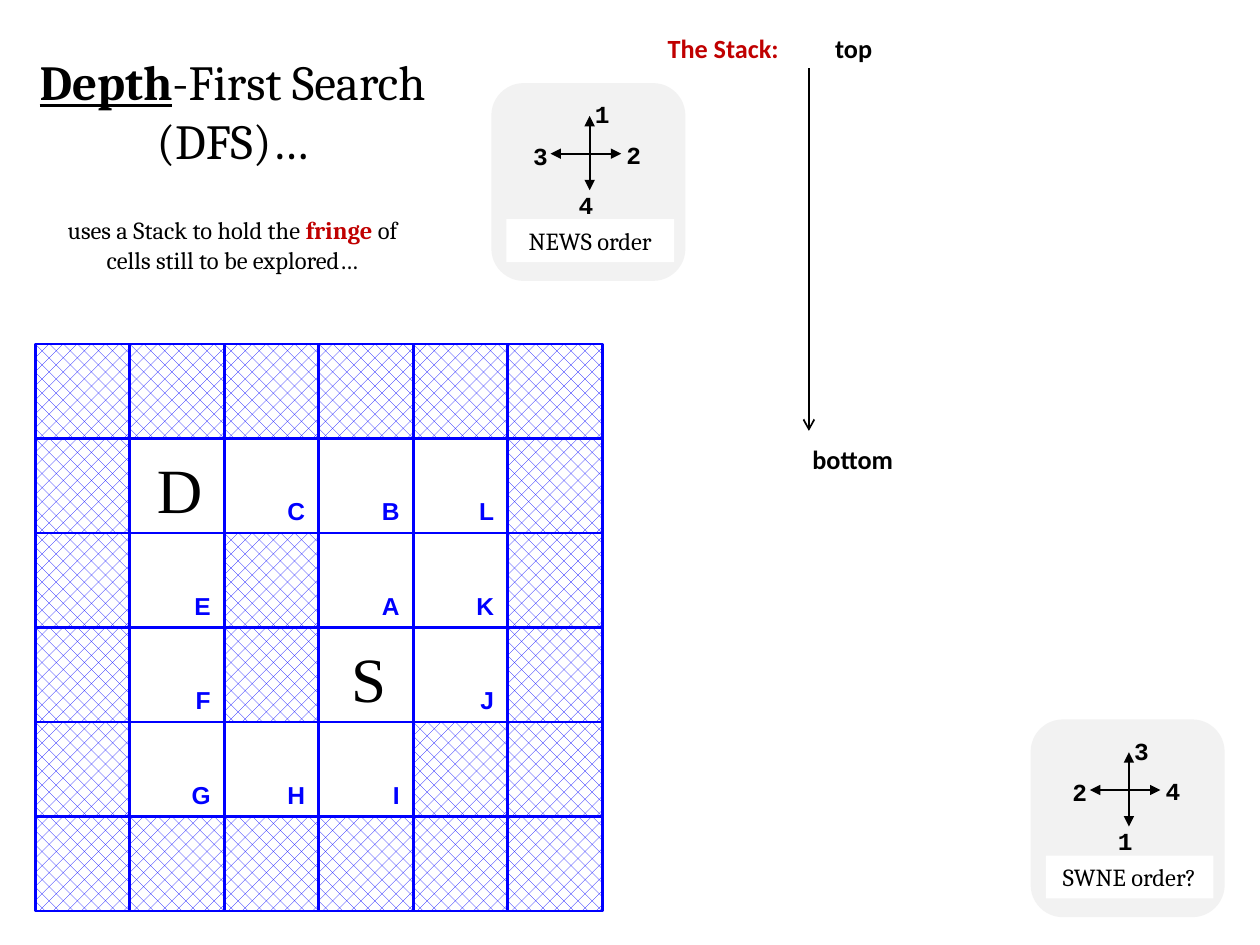
from dataclasses import dataclass

import pptx
import pptx.dml.color
import pptx.enum.dml
import pptx.enum.shapes
import pptx.enum.text
import pptx.oxml.ns
import pptx.util
from lxml import etree
from pptx.util import Inches

ALIGN = pptx.enum.text.PP_ALIGN
SHAPE = pptx.enum.shapes.MSO_SHAPE


@dataclass(frozen=True)
class Theme:
    black: str = "000000"
    white: str = "FFFFFF"
    red: str = "C00000"
    blue: str = "0000FF"
    panel: str = "F2F2F2"
    title: int = 28
    marker: int = 36
    stack: int = 15
    body: int = 14
    arrow_width: float = 1
    wall_width: float = 1.5


THEME = Theme()


def rgb(code):
    return pptx.dml.color.RGBColor.from_string(code)


def write(frame, runs, size=THEME.body, font="Cambria", color=THEME.black,
          bold=False, align=ALIGN.CENTER, wrap=True):
    """Write (text, overrides) runs, or one plain string, into a text frame."""
    frame.word_wrap = wrap
    frame.auto_size = pptx.enum.text.MSO_AUTO_SIZE.SHAPE_TO_FIT_TEXT
    paragraph = frame.paragraphs[0]
    paragraph.alignment = align
    for text, changes in [(runs, {})] if isinstance(runs, str) else runs:
        run = paragraph.add_run()
        run.text = text
        run.font.name = font
        run.font.size = pptx.util.Pt(size)
        run.font.bold = changes.get("bold", bold)
        run.font.underline = changes.get("underline", False)
        run.font.color.rgb = rgb(changes.get("color", color))


def add_text(slide, box, runs, **style):
    write(slide.shapes.add_textbox(*box).text_frame, runs, **style)


def add_block(slide, kind, box, fill=None):
    block = slide.shapes.add_shape(kind, *box)
    block.shadow.inherit = False
    block.line.fill.background()
    if fill:
        block.fill.solid()
        block.fill.fore_color.rgb = rgb(fill)
    else:
        block.fill.background()
    return block


def add_arrow(slide, start, end, head):
    arrow = slide.shapes.add_connector(
        pptx.enum.shapes.MSO_CONNECTOR.STRAIGHT, *start, *end)
    arrow.line.color.rgb = rgb(THEME.black)
    arrow.line.width = pptx.util.Pt(THEME.arrow_width)
    qn = pptx.oxml.ns.qn
    properties = arrow.element.spPr
    etree.SubElement(properties.find(qn("a:ln")), qn("a:tailEnd"), type=head)
    etree.SubElement(properties, qn("a:effectLst"))


def add_heading(slide, left, top):
    add_text(slide, (left, top, Inches(3.43), Inches(1.04)),
             [("Depth", {"bold": True, "underline": True}),
              ("-First Search (DFS)…", {})], size=THEME.title)
    add_text(slide, (left + Inches(0.26), top + Inches(1.3), Inches(2.91), Inches(0.57)),
             [("uses a Stack to hold the ", {}),
              ("fringe ", {"bold": True, "color": THEME.red}),
              ("of cells still to be explored…", {})])


def add_compass(slide, left, top, ranks, caption):
    """Panel with four arrows; ranks are given as north, east, south, west."""
    add_block(slide, SHAPE.ROUNDED_RECTANGLE,
              (left, top, Inches(1.54), Inches(1.57)), THEME.panel)

    # Arrows crossing near the hub
    for x1, y1, x2, y2 in [(0.78, 0.67, 0.78, 0.26), (0.68, 0.56, 1.03, 0.56),
                           (0.81, 0.56, 0.47, 0.56), (0.78, 0.5, 0.78, 0.85)]:
        add_arrow(slide, (left + Inches(x1), top + Inches(y1)),
                  (left + Inches(x2), top + Inches(y2)), "triangle")

    # Visiting rank at each arrow tip
    spots = [(0.63, 0.08), (0.88, 0.4), (0.5, 0.8), (0.14, 0.41)]
    for rank, (x, y) in zip(ranks, spots):
        add_text(slide, (left + Inches(x), top + Inches(y), Inches(0.5), Inches(0.33)),
                 rank, font="Courier New", bold=True)

    plate = add_block(slide, SHAPE.RECTANGLE,
                      (left + Inches(0.12), top + Inches(1.08), Inches(1.33), Inches(0.34)),
                      THEME.white)
    write(plate.text_frame, caption)


def add_maze(slide, left, top, side, rows):
    """Square grid: # is a wall, D and S are large markers, others cell names."""
    cells = [(mark, left + column * side, top + row * side)
             for row, marks in enumerate(rows) for column, mark in enumerate(marks)]

    # Cell squares
    for mark, x, y in cells:
        cell = add_block(slide, SHAPE.RECTANGLE, (x, y, side, side))
        cell.line.color.rgb = rgb(THEME.blue)
        cell.line.width = pptx.util.Pt(THEME.wall_width)
        if mark == "#":
            cell.fill.patterned()
            cell.fill.pattern = pptx.enum.dml.MSO_PATTERN.PERCENT_25
            cell.fill.fore_color.rgb = rgb(THEME.blue)
            cell.fill.back_color.rgb = rgb(THEME.white)

    # Cell names
    for mark, x, y in cells:
        if mark in "DS":
            add_text(slide, (x - Inches(0.19), y + Inches(0.05), Inches(1.17), Inches(0.7)),
                     mark, size=THEME.marker, font="Times New Roman")
        elif mark != "#":
            add_text(slide, (x + Inches(0.24), y + Inches(0.41), Inches(0.5), Inches(0.33)),
                     mark, font="Arial", color=THEME.blue, bold=True, align=ALIGN.RIGHT)


def add_stack(slide, left, top):
    height = Inches(0.35)
    for text, x, y, width, color in [("The Stack:", 0, 0, 1.09, THEME.red),
                                     ("top", 1.33, 0, 0.5, THEME.black),
                                     ("bottom", 1.15, 3.26, 0.86, THEME.black)]:
        add_text(slide, (left + Inches(x), top + Inches(y), Inches(width), height),
                 text, size=THEME.stack, font="Calibri", color=color, bold=True,
                 align=ALIGN.LEFT, wrap=False)
    axis = left + Inches(1.22)
    add_arrow(slide, (axis, top + Inches(0.33)), (axis, top + Inches(3.21)), "arrow")


def main():
    deck = pptx.Presentation()
    deck.slide_width, deck.slide_height = Inches(10), Inches(7.5)
    slide = deck.slides.add_slide(deck.slide_layouts[6])

    add_compass(slide, Inches(3.9), Inches(0.66), "1243", "NEWS order")
    add_maze(slide, Inches(0.28), Inches(2.73), Inches(0.75),
             ["######", "#DCBL#", "#E#AK#", "#F#SJ#", "#GHI##", "######"])
    add_heading(slide, Inches(0.13), Inches(0.36))
    add_stack(slide, Inches(5.2), Inches(0.21))
    add_compass(slide, Inches(8.18), Inches(5.71), "3412", "SWNE order?")

    deck.save("out.pptx")


if __name__ == "__main__":
    main()
